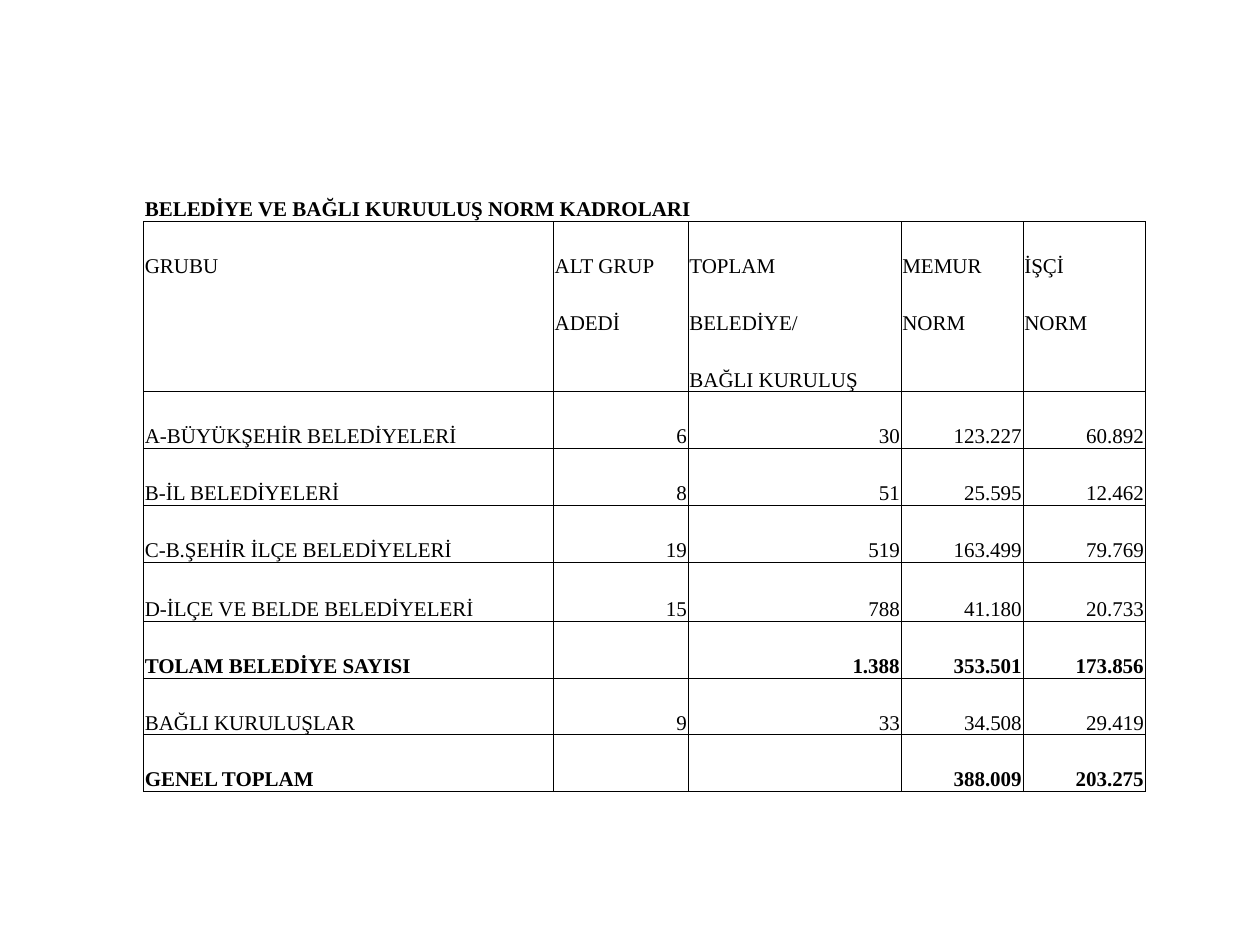
from lxml import etree
from pptx import Presentation
from pptx.dml.color import RGBColor
from pptx.enum.text import MSO_ANCHOR, PP_ALIGN
from pptx.oxml.ns import qn
from pptx.util import Pt

BOTTOM = MSO_ANCHOR.BOTTOM
LEFT, RIGHT = PP_ALIGN.LEFT, PP_ALIGN.RIGHT
FONT, BLACK = "Times New Roman", "000000"
WIDTHS = [234.2, 77, 121.7, 69.75, 69.75]
ROW, TALL, TALL_ROW = 32.45, 33.8, 7
HEAD, BODY = 1, 4
BOLD_ROWS = {0, 8, 10}
ROWS = [
    ["BELEDİYE VE BAĞLI KURUULUŞ NORM KADROLARI", "", "", "", ""],
    ["GRUBU", "ALT GRUP", "TOPLAM", "MEMUR", "İŞÇİ"],
    ["", "ADEDİ", "BELEDİYE/", "NORM", "NORM"],
    ["", "", "BAĞLI KURULUŞ", "", ""],
    ["A-BÜYÜKŞEHİR BELEDİYELERİ", "6", "30", "123.227", "60.892"],
    ["B-İL BELEDİYELERİ", "8", "51", "25.595", "12.462"],
    ["C-B.ŞEHİR İLÇE BELEDİYELERİ", "19", "519", "163.499", "79.769"],
    ["D-İLÇE VE BELDE BELEDİYELERİ", "15", "788", "41.180", "20.733"],
    ["TOLAM BELEDİYE SAYISI", "", "1.388", "353.501", "173.856"],
    ["BAĞLI KURULUŞLAR", "9", "33", "34.508", "29.419"],
    ["GENEL TOPLAM", "", "", "388.009", "203.275"],
]


def color(code):
    """Turn a hex string into a colour."""
    return RGBColor.from_string(code)


def write(cell, text, size=12, bold=False, align=LEFT, ink=BLACK):
    """Put formatted text at the bottom of a cell."""
    cell.vertical_anchor = BOTTOM
    cell.margin_left = cell.margin_right = cell.margin_top = Pt(0.75)
    cell.margin_bottom = 0
    para = cell.text_frame.paragraphs[0]
    para.alignment = align
    para.font.size = Pt(size)
    if text:
        run = para.add_run()
        run.text = text
        font = run.font
        font.name, font.size, font.bold = FONT, Pt(size), bold
        font.color.rgb = color(ink)


def border(cell, sides, width=0.5, ink=BLACK):
    """Draw the named sides of a cell and hide the others."""
    props = cell._tc.get_or_add_tcPr()
    for side in "LRTB":
        line = etree.SubElement(props, qn("a:ln" + side), w=str(Pt(width)))
        if side in sides:
            fill = etree.SubElement(line, qn("a:solidFill"))
            etree.SubElement(fill, qn("a:srgbClr"), val=ink)
        else:
            etree.SubElement(line, qn("a:noFill"))


def edges(row):
    """Name the sides that are ruled in a row."""
    if row < HEAD:
        return "B"
    top = "T" if row == HEAD or row >= BODY else ""
    base = "B" if row >= BODY - 1 else ""
    return "LR" + top + base


def grid(slide, left, top):
    """Add the table of staff norms."""
    heights = [TALL if i == TALL_ROW else ROW for i in range(len(ROWS))]
    frame = slide.shapes.add_table(
        len(ROWS), len(WIDTHS), Pt(left), Pt(top),
        Pt(sum(WIDTHS)), Pt(sum(heights)))
    table = frame.table
    table.first_row = table.horz_banding = False
    for col, width in zip(table.columns, WIDTHS):
        col.width = Pt(width)
    for i, texts in enumerate(ROWS):
        table.rows[i].height = Pt(heights[i])
        for j, text in enumerate(texts):
            cell = table.cell(i, j)
            align = RIGHT if i >= BODY and j else LEFT
            write(cell, text, bold=i in BOLD_ROWS, align=align)
            border(cell, edges(i))
            cell.fill.background()
    table.cell(0, 0).merge(table.cell(0, 2))


def main():
    """Build the slide and save it."""
    deck = Presentation()
    deck.slide_width, deck.slide_height = Pt(720), Pt(540)
    slide = deck.slides.add_slide(deck.slide_layouts[6])
    grid(slide, 82, 94.2)
    deck.save("out.pptx")


if __name__ == "__main__":
    main()
